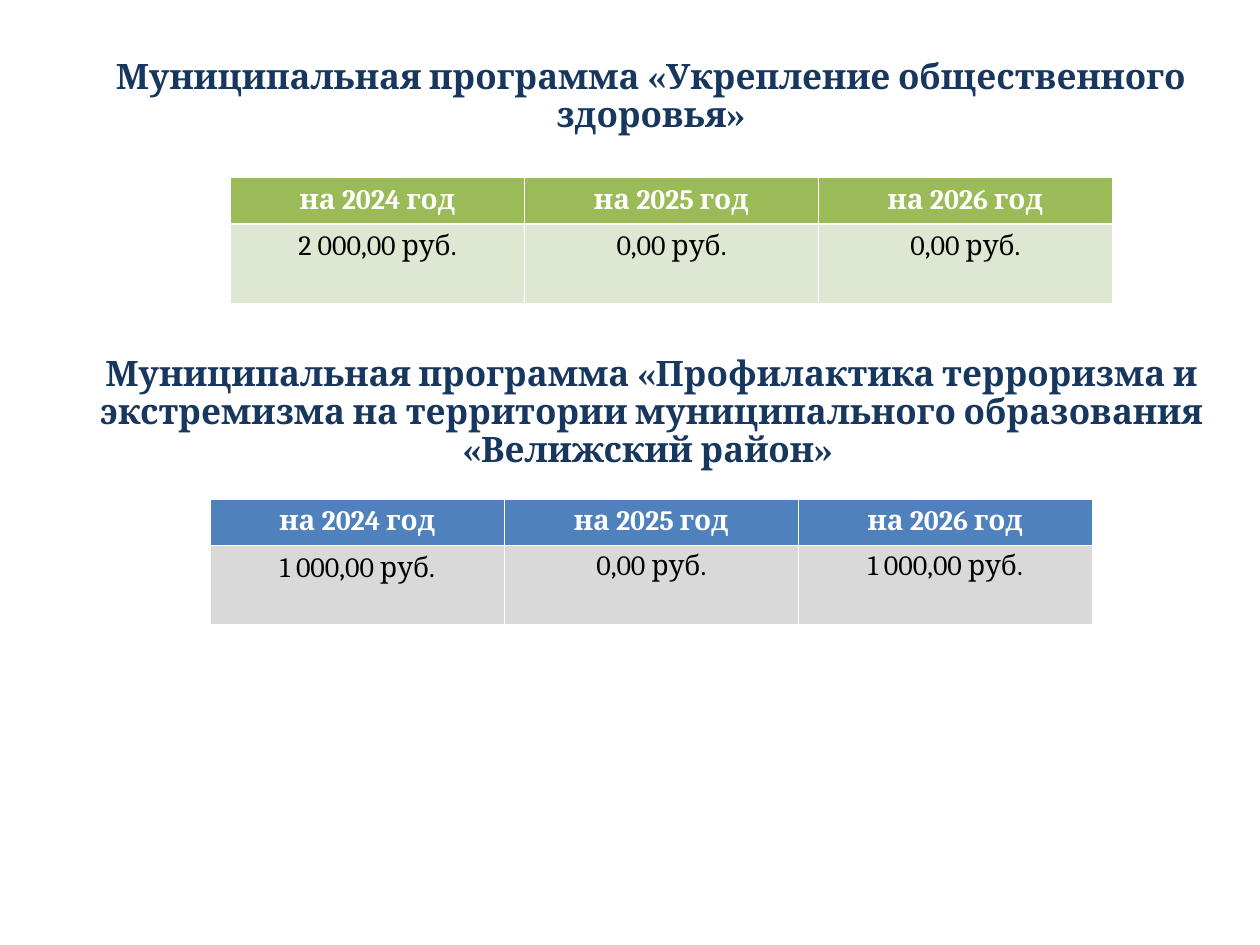
import pptx
import pptx.util
import pptx.dml.color
import pptx.enum.text

COLORS = {
    "navy": "17375E",
    "white": "FFFFFF",
    "black": "000000",
    "green": "9BBB59",
    "pale green": "DEE7D1",
    "blue": "4F81BD",
    "gray": "D9D9D9",
}
FONT = "Cambria"
WIDTH, HEIGHT = 10, 7.5
TABLE_WIDTH = 7
ROW_HEIGHTS = (0.37, 0.63)
CELL_MARGINS = (0.1, 0.05)
TIGHT_MARGINS = (0, 0)
YEARS = ("на 2024 год", "на 2025 год", "на 2026 год")

PROGRAMS = [
    {
        "title": "Муниципальная программа «Укрепление общественного здоровья»",
        "title_area": (0.33, 0, 9.67, 1.12),
        "table_corner": (1.83, 1.41),
        "fills": ("green", "pale green"),
        "amounts": ("2 000,00 руб.", "0,00 руб.", "0,00 руб."),
        "tight_columns": (),
    },
    {
        "title": "Муниципальная программа «Профилактика терроризма и экстремизма "
                 "на территории муниципального образования «Велижский район» ",
        "title_area": (0.51, 2.7, 9.32, 1.08),
        "table_corner": (1.67, 3.96),
        "fills": ("blue", "gray"),
        "amounts": ("1 000,00 руб.", "0,00 руб.", "1 000,00 руб."),
        "tight_columns": (1, 2),
    },
]


def inches(*lengths):
    return [pptx.util.Inches(length) for length in lengths]


def rgb(name):
    return pptx.dml.color.RGBColor.from_string(COLORS[name])


def write(frame, text, size=16, color="black", bold=False, spacing=1.0):
    para = frame.paragraphs[0]
    para.alignment = pptx.enum.text.PP_ALIGN.CENTER
    para.line_spacing = spacing
    span = para.add_run()
    span.text = text
    span.font.name = FONT
    span.font.size = pptx.util.Pt(size)
    span.font.bold = bold
    span.font.color.rgb = rgb(color)


def place_title(box, program):
    box.left, box.top, box.width, box.height = inches(*program["title_area"])
    frame = box.text_frame
    frame.word_wrap = True
    frame.auto_size = pptx.enum.text.MSO_AUTO_SIZE.NONE
    frame.vertical_anchor = pptx.enum.text.MSO_ANCHOR.BOTTOM
    write(frame, program["title"], size=20, color="navy", bold=True, spacing=0.9)


def add_amounts(page, program):
    rows = (YEARS, program["amounts"])
    area = (*program["table_corner"], TABLE_WIDTH, sum(ROW_HEIGHTS))
    table = page.shapes.add_table(len(rows), len(YEARS), *inches(*area)).table
    for row_index, texts in enumerate(rows):
        table.rows[row_index].height = pptx.util.Inches(ROW_HEIGHTS[row_index])
        header = row_index == 0
        for column_index, text in enumerate(texts):
            cell = table.cell(row_index, column_index)
            cell.fill.solid()
            cell.fill.fore_color.rgb = rgb(program["fills"][row_index])
            tight = not header and column_index in program["tight_columns"]
            side, edge = inches(*(TIGHT_MARGINS if tight else CELL_MARGINS))
            cell.margin_left = cell.margin_right = side
            cell.margin_top = cell.margin_bottom = edge
            write(cell.text_frame, text, color="white" if header else "black",
                  bold=header, spacing=1.15 if tight else 1.0)


def main():
    deck = pptx.Presentation()
    deck.slide_width, deck.slide_height = inches(WIDTH, HEIGHT)
    page = deck.slides.add_slide(deck.slide_layouts[5])
    first, second = PROGRAMS
    place_title(page.shapes.title, first)
    place_title(page.shapes.add_textbox(*inches(*second["title_area"])), second)
    for program in PROGRAMS:
        add_amounts(page, program)
    deck.save("out.pptx")


if __name__ == "__main__":
    main()
